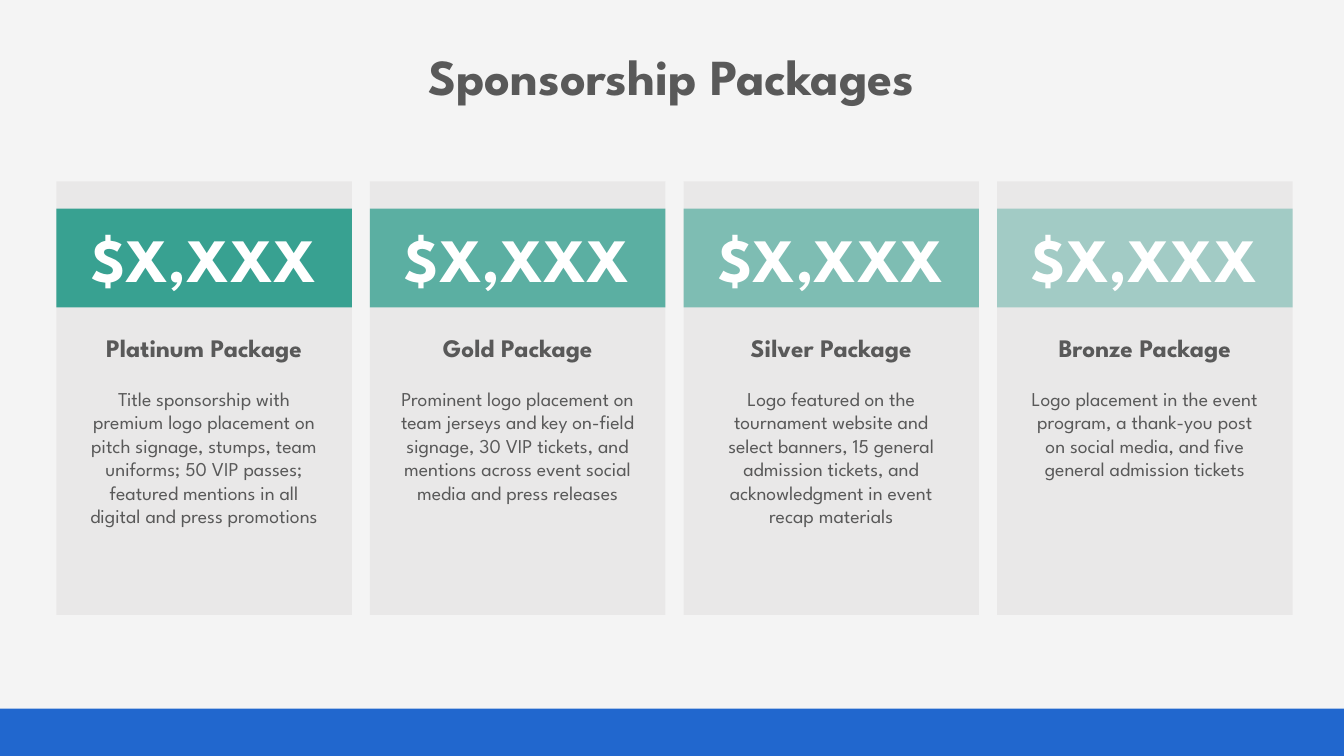
from lxml import etree
from pptx import Presentation
from pptx.dml.color import RGBColor
from pptx.enum.shapes import MSO_SHAPE
from pptx.enum.text import MSO_ANCHOR, MSO_AUTO_SIZE, PP_ALIGN
from pptx.oxml.ns import qn
from pptx.util import Inches, Pt

RECT = MSO_SHAPE.RECTANGLE
TOP, MIDDLE = MSO_ANCHOR.TOP, MSO_ANCHOR.MIDDLE
CENTER = PP_ALIGN.CENTER
FIT_SHAPE = MSO_AUTO_SIZE.SHAPE_TO_FIT_TEXT

FONT = "League Spartan"
GREY, WHITE, TEAL = "595959", "FFFFFF", "38A191"
CARD_GREY, BLUE, BACKGROUND = "E7E6E6", "2167CE", "F4F4F4"

# Slide and card grid, in inches
SLIDE_W, SLIDE_H = 13.33, 7.5
CARD_LEFT, CARD_TOP, CARD_W, CARD_H = 0.56, 1.8, 2.93, 4.3
COLUMN_STEP = 3.11
BAND_TOP, BAND_H = 2.07, 0.98
FOOTER_H = 0.47

# Name, price, opacity of the price band, benefits
PACKAGES = [
    ("Platinum Package", "$X,XXX", 100,
     "Title sponsorship with premium logo placement on pitch signage, stumps, "
     "team uniforms; 50 VIP passes; featured mentions in all digital and press "
     "promotions"),
    ("Gold Package", "$X,XXX", 80,
     "Prominent logo placement on team jerseys and key on-field signage, "
     "30 VIP tickets, and mentions across event social media and press releases"),
    ("Silver Package", "$X,XXX", 60,
     "Logo featured on the tournament website and select banners, 15 general "
     "admission tickets, and acknowledgment in event recap materials"),
    ("Bronze Package", "$X,XXX", 40,
     "Logo placement in the event program, a thank-you post on social media, "
     "and five general admission tickets"),
]


def paint(fill, color, opacity=100):
    fill.solid()
    fill.fore_color.rgb = RGBColor.from_string(color)
    if opacity < 100:
        clr = fill._xPr.find(qn("a:solidFill"))[0]
        etree.SubElement(clr, qn("a:alpha"), val=str(opacity * 1000))


def add_rect(s, left, top, width, height, color, opacity=100):
    sp = s.shapes.add_shape(RECT, Inches(left), Inches(top),
                            Inches(width), Inches(height))
    sp.shadow.inherit = False
    sp.line.fill.background()
    paint(sp.fill, color, opacity)
    return sp


def set_frame(tf, anchor, left=0.1, top=0.05, right=0.1, bottom=0.05):
    tf.word_wrap = True
    tf.vertical_anchor = anchor
    tf.margin_left, tf.margin_top = Inches(left), Inches(top)
    tf.margin_right, tf.margin_bottom = Inches(right), Inches(bottom)


def write(p, text, size, color, bold=True):
    p.text = text
    p.alignment = CENTER
    p.font.name = FONT
    p.font.size = Pt(size)
    p.font.bold = bold
    p.font.color.rgb = RGBColor.from_string(color)


def add_title(s, text):
    sp = s.shapes.title
    sp.left, sp.top = Inches(2.82), Inches(0.4)
    sp.width, sp.height = Inches(7.68), Inches(0.71)
    tf = sp.text_frame
    set_frame(tf, TOP)
    tf.auto_size = FIT_SHAPE
    write(tf.paragraphs[0], text, 36, GREY)


def add_package(s, column, name, price, opacity, benefits):
    left = CARD_LEFT + column * COLUMN_STEP

    # Card with name and benefits
    card = add_rect(s, left, CARD_TOP, CARD_W, CARD_H, CARD_GREY, 80)
    tf = card.text_frame
    set_frame(tf, TOP, 0.3, 1.5, 0.3, 0.3)
    p = tf.paragraphs[0]
    write(p, name, 18, GREY)
    p.space_after = Pt(17)
    write(tf.add_paragraph(), benefits, 14, GREY, bold=False)

    # Price band across the card
    band = add_rect(s, left, BAND_TOP, CARD_W, BAND_H, TEAL, opacity)
    set_frame(band.text_frame, MIDDLE)
    write(band.text_frame.paragraphs[0], price, 44, WHITE)


def main():
    prs = Presentation()
    prs.slide_width, prs.slide_height = Inches(SLIDE_W), Inches(SLIDE_H)
    s = prs.slides.add_slide(prs.slide_layouts[5])
    paint(s.background.fill, BACKGROUND)

    add_title(s, "Sponsorship Packages")
    for column, package in enumerate(PACKAGES):
        add_package(s, column, *package)

    # Footer bar
    add_rect(s, 0, SLIDE_H - FOOTER_H, SLIDE_W, FOOTER_H, BLUE)

    prs.save("out.pptx")


if __name__ == "__main__":
    main()
